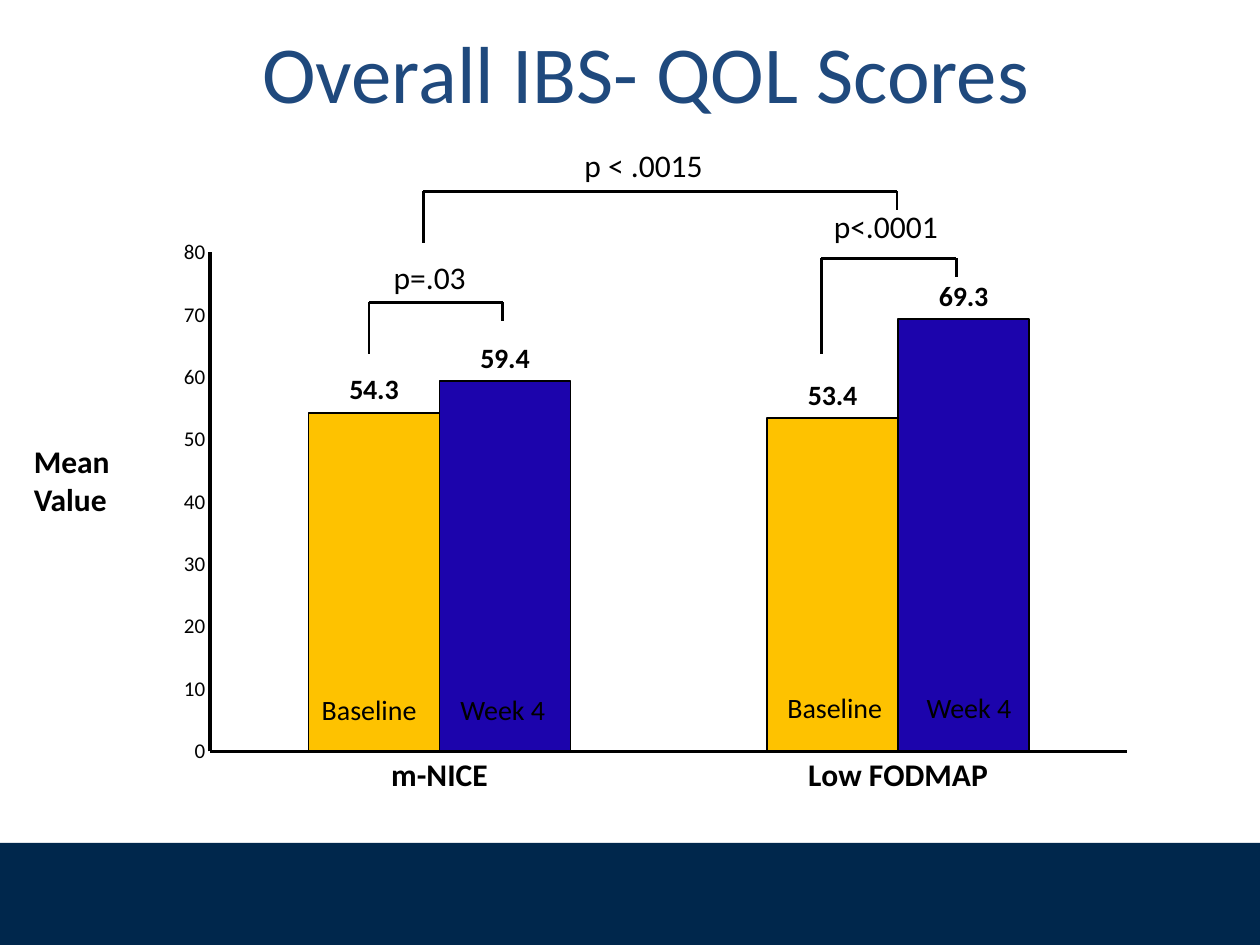
import pptx
import pptx.chart.data
import pptx.dml.color
import pptx.enum.chart
import pptx.enum.shapes
import pptx.enum.text
import pptx.oxml
import pptx.util
from pptx.util import Inches, Pt

RGBColor = pptx.dml.color.RGBColor
Align = pptx.enum.text.PP_ALIGN
BLACK = RGBColor(0, 0, 0)
NAVY = RGBColor(0x00, 0x27, 0x4C)
BLUE = RGBColor(0x1F, 0x49, 0x7D)
GOLD = RGBColor(0xFE, 0xC2, 0x00)
VIOLET = RGBColor(0x1C, 0x04, 0xAC)
FONT = "Calibri"


def style(font, size, color=BLACK, bold=False):
    font.name = FONT
    font.size = Pt(size)
    font.bold = bold
    font.color.rgb = color


def add_band(slide, box):
    band = slide.shapes.add_shape(
        pptx.enum.shapes.MSO_SHAPE.RECTANGLE, *map(Inches, box))
    band.shadow.inherit = False
    band.fill.solid()
    band.fill.fore_color.rgb = NAVY
    band.line.fill.background()


def add_title(slide, box, text):
    title = slide.shapes.title
    title.left, title.top, title.width, title.height = map(Inches, box)
    frame = title.text_frame
    frame.auto_size = pptx.enum.text.MSO_AUTO_SIZE.NONE
    frame.vertical_anchor = pptx.enum.text.MSO_ANCHOR.BOTTOM
    frame.margin_left = frame.margin_right = frame.margin_bottom = 0
    frame.margin_top = Inches(0.05)
    para = frame.paragraphs[0]
    para.alignment = Align.CENTER
    run = para.add_run()
    run.text = text
    style(run.font, 46.2, BLUE)


def add_label(slide, box, text, size=18, bold=False, align=Align.CENTER):
    frame = slide.shapes.add_textbox(*map(Inches, box)).text_frame
    frame.word_wrap = True
    para = frame.paragraphs[0]
    para.alignment = align
    run = para.add_run()
    run.text = text
    style(run.font, size, bold=bold)


def add_bracket(slide, box, drop):
    """Draw a bar along the box top, a full left leg and a short right leg."""
    left, top, width, height = box
    right = left + width
    group = slide.shapes.add_group_shape()
    for ends in ((left, top, right, top),
                 (left, top, left, top + height),
                 (right, top, right, top + drop)):
        line = group.shapes.add_connector(
            pptx.enum.shapes.MSO_CONNECTOR.STRAIGHT, *map(Inches, ends))
        line.line.color.rgb = BLACK
        line.line.width = Pt(1.5)
        line._element.spPr.append(pptx.oxml.parse_xml(
            '<a:effectLst xmlns:a='
            '"http://schemas.openxmlformats.org/drawingml/2006/main"/>'))


def set_plot(chart, x, y, w, h):
    """Fix the inner plot area as fractions of the chart."""
    area = chart._chartSpace.chart.plotArea
    for old in area.findall(pptx.oxml.ns.qn("c:layout")):
        area.remove(old)
    area.insert(0, pptx.oxml.parse_xml(
        '<c:layout xmlns:c='
        '"http://schemas.openxmlformats.org/drawingml/2006/chart">'
        '<c:manualLayout><c:layoutTarget val="inner"/>'
        '<c:xMode val="edge"/><c:yMode val="edge"/>'
        f'<c:x val="{x}"/><c:y val="{y}"/><c:w val="{w}"/><c:h val="{h}"/>'
        '</c:manualLayout></c:layout>'))


def add_scores(slide, box):
    kinds = pptx.enum.chart
    data = pptx.chart.data.CategoryChartData()
    data.categories = ["m-NICE", "Low FODMAP"]
    data.add_series("Series 1", (54.3, 53.4))
    data.add_series("Series 2", (59.4, 69.3))
    chart = slide.shapes.add_chart(
        kinds.XL_CHART_TYPE.COLUMN_CLUSTERED, *map(Inches, box), data).chart
    chart.has_legend = chart.has_title = False
    style(chart.font, 10)
    set_plot(chart, 0.101, 0.022, 0.877, 0.766)

    plot = chart.plots[0]
    plot.gap_width = 150
    plot.overlap = 0
    plot.vary_by_categories = False
    for series, color in zip(plot.series, (GOLD, VIOLET)):
        series.format.fill.solid()
        series.format.fill.fore_color.rgb = color
        series.format.line.color.rgb = BLACK
        series.format.line.width = Pt(1)
        labels = series.data_labels
        labels.show_value = True
        labels.position = kinds.XL_LABEL_POSITION.OUTSIDE_END
        style(labels.font, 16, bold=True)

    values = chart.value_axis
    values.minimum_scale, values.maximum_scale = 0, 80
    values.major_unit = 10
    for axis, size, bold in ((chart.category_axis, 18, True),
                             (values, 12, False)):
        axis.has_major_gridlines = False
        axis.major_tick_mark = kinds.XL_TICK_MARK.NONE
        axis.minor_tick_mark = kinds.XL_TICK_MARK.NONE
        axis.format.line.color.rgb = BLACK
        axis.format.line.width = Pt(2)
        style(axis.tick_labels.font, size, bold=bold)


def main():
    deck = pptx.Presentation()
    deck.slide_width, deck.slide_height = Inches(10), Inches(7.5)
    slide = deck.slides.add_slide(deck.slide_layouts[5])
    add_band(slide, (0, 6.69, 10, 0.81))
    add_title(slide, (0.83, 0.17, 8.59, 0.78), "Overall IBS- QOL Scores")
    add_scores(slide, (0.83, 1.89, 8.3, 5.17))

    add_label(slide, (6.37, 1.59, 1.32, 0.4), "p<.0001")
    add_label(slide, (2.75, 2, 1.32, 0.4), "p=.03")
    add_label(slide, (4.54, 1.11, 1.38, 0.4), "p < .0015", align=Align.LEFT)
    for box in ((2.93, 2.4, 1.06, 0.41),
                (6.52, 2.05, 1.07, 0.76),
                (3.36, 1.52, 3.76, 0.41)):
        add_bracket(slide, box, 0.15)

    add_label(slide, (0.17, 3.46, 1.12, 0.71), "Mean Value",
              bold=True, align=Align.LEFT)
    for left, top, width, text in ((2.36, 5.45, 1.14, "Baseline"),
                                   (3.5, 5.45, 0.98, "Week 4"),
                                   (5.99, 5.43, 1.27, "Baseline"),
                                   (7.2, 5.43, 0.98, "Week 4")):
        add_label(slide, (left, top, width, 0.37), text, 16)
    deck.save("out.pptx")


if __name__ == "__main__":
    main()
